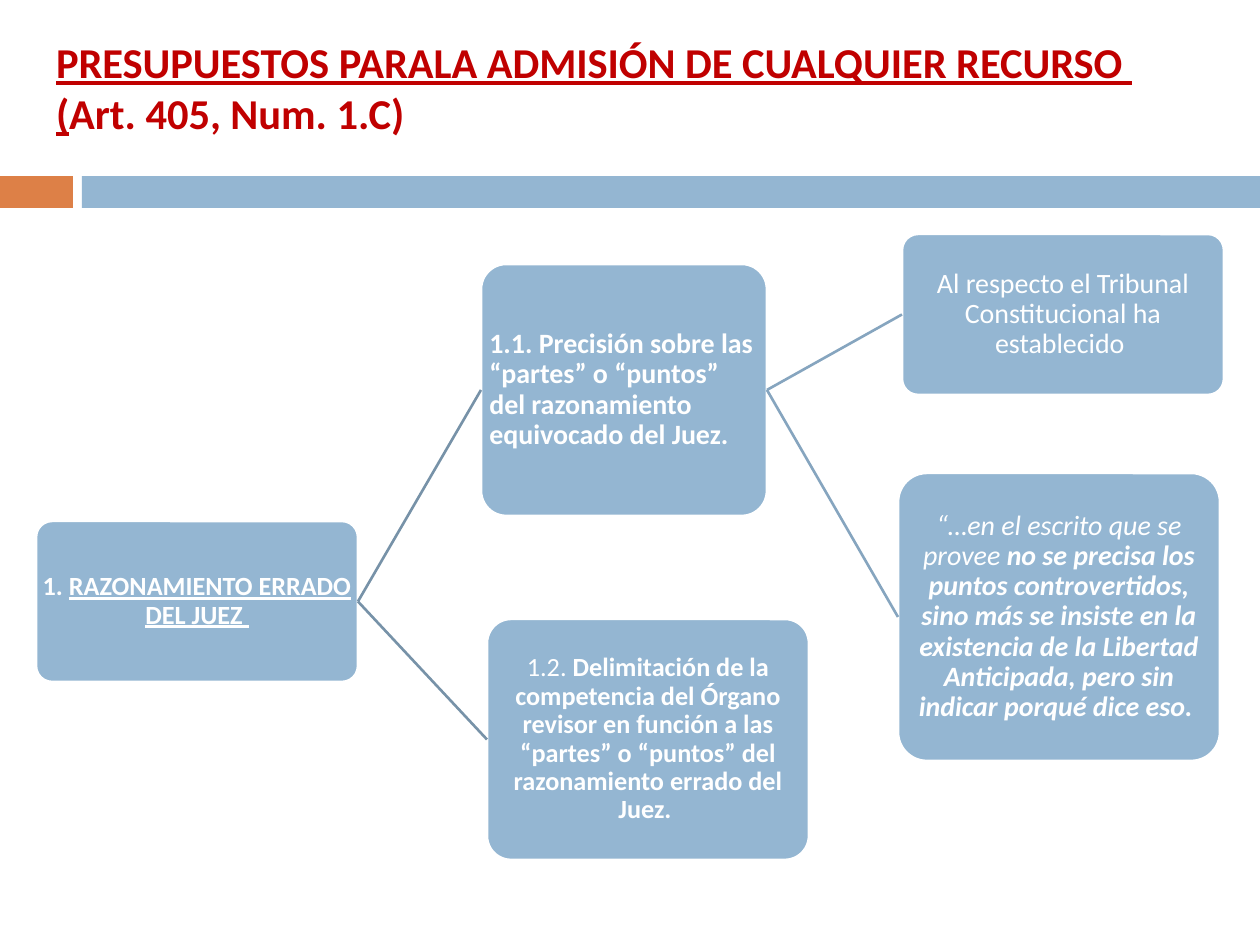
"""Builds the slide on the requirements for admitting an appeal."""
from lxml import etree
from pptx import Presentation
from pptx.dml.color import RGBColor
from pptx.enum.shapes import MSO_CONNECTOR, MSO_SHAPE
from pptx.enum.text import MSO_ANCHOR, PP_ALIGN
from pptx.oxml.ns import qn
from pptx.util import Emu, Pt

RECT, ROUND = MSO_SHAPE.RECTANGLE, MSO_SHAPE.ROUNDED_RECTANGLE
STRAIGHT = MSO_CONNECTOR.STRAIGHT
TOP, MIDDLE = MSO_ANCHOR.TOP, MSO_ANCHOR.MIDDLE
LEFT, CENTER = PP_ALIGN.LEFT, PP_ALIGN.CENTER
LEFT_SIDE, RIGHT_SIDE = 1, 3
TITLE_ONLY = 5

COLORS = {"orange": "DD8047", "blue": "94B6D2", "title": "C00000",
          "white": "FFFFFF", "branch": "7792A8", "twig": "86A5BF"}
FONT = "Calibri"
B, I, U = {"bold": True}, {"italic": True}, {"underline": True}

TITLE_BOX = (35, 31, 1201, 136)
TITLE_LINES = [
    [("PRESUPUESTOS PARALA ADMISIÓN DE CUALQUIER RECURSO ", B | U)],
    [("(", B | U), ("Art. 405, Num. 1.C)", B)],
]
BARS = [("orange", (0, 176, 73, 32)), ("blue", (82, 176, 1178, 32))]
NODES = {
    "judge": ((36, 521, 322, 161), 15, CENTER, [
        ("1. ", B), ("RAZONAMIENTO ERRADO DEL JUEZ ", B | U)]),
    "points": ((481, 264, 286, 252), 16, LEFT, [
        ("1.1. Precisión sobre las “partes” o “puntos” del razonamiento "
         "equivocado del Juez.", B)]),
    "court": ((902, 234, 322, 161), 16, CENTER, [
        ("Al respecto el Tribunal Constitucional ha establecido ", {})]),
    "quote": ((898, 473, 322, 288), 16, CENTER, [
        ("“…en el escrito que se provee ", I),
        ("no se precisa los puntos controvertidos, sino más se insiste en la "
         "existencia de la Libertad Anticipada, pero sin indicar porqué dice "
         "eso. ", B | I)]),
    "scope": ((487, 619, 322, 241), 15, CENTER, [
        ("1.2. ", {}),
        ("Delimitación de la competencia del Órgano revisor en función a las "
         "“partes” o “puntos” del razonamiento errado del Juez. ", B)]),
}
LINKS = [("judge", "points", "branch"), ("judge", "scope", "branch"),
         ("points", "court", "twig"), ("points", "quote", "twig")]


def px(n):
    return Emu(round(n * 914400 / 126))


def rgb(name):
    return RGBColor.from_string(COLORS[name])


def set_frame(tf, anchor, left, top, right, bottom):
    values = {"word_wrap": True, "vertical_anchor": anchor,
              "margin_left": px(left), "margin_top": px(top),
              "margin_right": px(right), "margin_bottom": px(bottom)}
    for name, value in values.items():
        setattr(tf, name, value)


def add_runs(p, runs, size, color):
    for text, style in runs:
        r = p.add_run()
        r.text = text
        values = {"name": FONT, "size": Pt(size), "bold": False} | style
        for name, value in values.items():
            setattr(r.font, name, value)
        r.font.color.rgb = rgb(color)


def add_block(s, kind, box, color):
    sp = s.shapes.add_shape(kind, *map(px, box))
    sp.shadow.inherit = False
    sp.fill.solid()
    sp.fill.fore_color.rgb = rgb(color)
    sp.line.fill.background()
    return sp


def add_title(s):
    sp = s.shapes.title
    sp.left, sp.top, sp.width, sp.height = map(px, TITLE_BOX)
    tf = sp.text_frame
    set_frame(tf, TOP, 21, 5, 12, 5)
    p = tf.paragraphs[0]
    p.alignment = LEFT
    for i, runs in enumerate(TITLE_LINES):
        if i:
            p.add_line_break()
        add_runs(p, runs, 24.3, "title")


def add_node(s, box, size, align, runs):
    sp = add_block(s, ROUND, box, "blue")
    sp.adjustments[0] = 0.1
    sp.line.color.rgb = rgb("white")
    sp.line.width = Pt(1.5)
    set_frame(sp.text_frame, MIDDLE, 1, 1, 1, 1)
    p = sp.text_frame.paragraphs[0]
    p.alignment, p.line_spacing = align, 0.9
    add_runs(p, runs, size, "white")
    return sp


def add_link(s, start, end, color):
    line = s.shapes.add_connector(STRAIGHT, 0, 0, 0, 0)
    line.begin_connect(start, RIGHT_SIDE)
    line.end_connect(end, LEFT_SIDE)
    line.line.color.rgb = rgb(color)
    line.line.width = Pt(1.5)
    etree.SubElement(line._element.spPr, qn("a:effectLst"))


def main():
    prs = Presentation()
    prs.slide_width, prs.slide_height = px(1260), px(945)
    s = prs.slides.add_slide(prs.slide_layouts[TITLE_ONLY])
    for color, box in BARS:
        add_block(s, RECT, box, color)
    add_title(s)
    nodes = {key: add_node(s, *node) for key, node in NODES.items()}
    for start, end, color in LINKS:
        add_link(s, nodes[start], nodes[end], color)
    prs.save("out.pptx")


if __name__ == "__main__":
    main()
